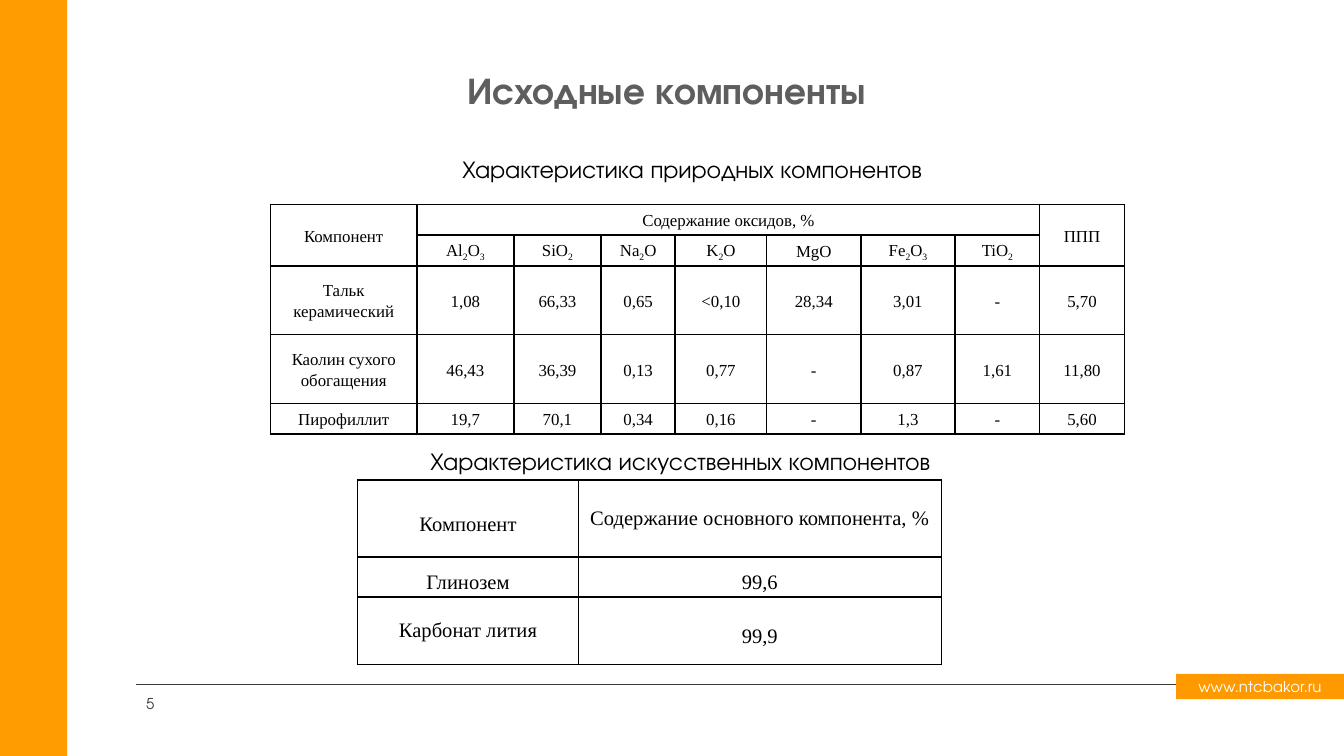
from itertools import groupby

from lxml.etree import SubElement
from pptx import Presentation
from pptx.dml.color import RGBColor
from pptx.enum.shapes import MSO_CONNECTOR as CONNECTOR, MSO_SHAPE as SHAPE
from pptx.enum.text import MSO_ANCHOR as ANCHOR, PP_ALIGN as ALIGN
from pptx.oxml.ns import qn
from pptx.util import Cm, Pt

ORANGE = RGBColor(0xFF, 0x9D, 0x00)
BADGE_ORANGE = RGBColor(0xFF, 0x99, 0x00)
WHITE = RGBColor(0xFF, 0xFF, 0xFF)
BLACK = RGBColor(0x00, 0x00, 0x00)
TITLE_GREY = RGBColor(0x5E, 0x5E, 0x5E)
DARK_GREY = RGBColor(0x3B, 0x3B, 0x3B)
HEADING_FONT = "TeX Gyre Adventor"
TABLE_FONT = "Times New Roman"

OXIDES = ["Al2O3", "SiO2", "Na2O", "K2O", "MgO", "Fe2O3", "TiO2"]
NATURAL = [
    ["Тальк керамический", "1,08", "66,33", "0,65", "<0,10", "28,34", "3,01", "‑", "5,70"],
    ["Каолин сухого обогащения", "46,43", "36,39", "0,13", "0,77", "-", "0,87", "1,61", "11,80"],
    ["Пирофиллит", "19,7", "70,1", "0,34", "0,16", "-", "1,3", "‑", "5,60"],
]
# Each artificial cell: text and line spacing
ARTIFICIAL = [
    [("Компонент", 1.5), ("Содержание основного компонента, %", 1)],
    [("Глинозем", 1.5), ("99,6", 1.5)],
    [("Карбонат лития", 1), ("99,9", 1.5)],
]


def add_run(paragraph, text, size, color, font=HEADING_FONT, bold=False):
    run = paragraph.add_run()
    run.text = text
    run.font.size = Pt(size)
    run.font.name = font
    run.font.bold = bold
    run.font.color.rgb = color
    return run


def write_line(shape, text, size, color, align=ALIGN.CENTER, anchor=ANCHOR.MIDDLE,
               insets=(0.08, 0.08), bold=False):
    frame = shape.text_frame
    frame.word_wrap = True
    frame.vertical_anchor = anchor
    frame.margin_left = frame.margin_right = Cm(insets[0])
    frame.margin_top = frame.margin_bottom = Cm(insets[1])
    paragraph = frame.paragraphs[0]
    paragraph.alignment = align
    return add_run(paragraph, text, size, color, bold=bold)


def add_panel(slide, box, color):
    panel = slide.shapes.add_shape(SHAPE.RECTANGLE, *map(Cm, box))
    panel.shadow.inherit = False
    panel.fill.solid()
    panel.fill.fore_color.rgb = color
    panel.line.fill.background()
    return panel


def add_footer(slide, left, top, right):
    """Rule, site badge and page number, placed from the left end of the rule."""
    rule = slide.shapes.add_connector(CONNECTOR.STRAIGHT, Cm(left), Cm(top),
                                      Cm(right - 2.59), Cm(top))
    rule.line.color.rgb = DARK_GREY
    rule.line.width = Pt(1)
    SubElement(rule._element.spPr, qn("a:effectLst"))

    badge = add_panel(slide, (right - 3.17, top - 0.2, 3.17, 0.48), BADGE_ORANGE)
    write_line(badge, "www.ntcbakor.ru", 8, WHITE)

    number = slide.shapes.add_textbox(Cm(left - 0.11), Cm(top + 0.1), Cm(0.71), Cm(0.51))
    digit = write_line(number, "5", 8, DARK_GREY, align=ALIGN.RIGHT, insets=(0.25, 0.13))
    digit.font._element.set("spc", "30")


def place_title(slide, box):
    title = slide.shapes.title
    title.left, title.top, title.width, title.height = map(Cm, box)
    write_line(title, "Исходные компоненты", 20, TITLE_GREY, bold=True)


def add_caption(slide, box, text):
    caption = slide.shapes.add_textbox(*map(Cm, box))
    write_line(caption, text, 13, BLACK, anchor=ANCHOR.TOP, insets=(0.2, 0.1))


def add_grid(slide, left, top, widths, heights):
    """Plain table with thin black borders on every cell."""
    table = slide.shapes.add_table(len(heights), len(widths), Cm(left), Cm(top),
                                   Cm(sum(widths)), Cm(sum(heights))).table
    table.first_row = table.horz_banding = False
    for column, width in zip(table.columns, widths):
        column.width = Cm(width)
    for row, height in zip(table.rows, heights):
        row.height = Cm(height)
    for cell in table.iter_cells():
        cell.margin_left = cell.margin_right = Cm(0.15)
        cell.margin_top = cell.margin_bottom = 0
        cell.vertical_anchor = ANCHOR.MIDDLE
        properties = cell._tc.get_or_add_tcPr()
        for side in ("lnL", "lnR", "lnT", "lnB"):
            border = SubElement(properties, qn(f"a:{side}"), w=str(Pt(1)))
            fill = SubElement(border, qn("a:solidFill"))
            SubElement(fill, qn("a:srgbClr"), val=str(BLACK))
        cell.fill.background()
    return table


def write_cell(cell, text, size, spacing, formula=False):
    paragraph = cell.text_frame.paragraphs[0]
    paragraph.alignment = ALIGN.CENTER
    paragraph.line_spacing = spacing
    if not formula:
        add_run(paragraph, text, size, BLACK, TABLE_FONT)
        return
    # Digits of a formula are subscripts
    for is_digit, letters in groupby(text, str.isdigit):
        run = add_run(paragraph, "".join(letters), size, BLACK, TABLE_FONT)
        if is_digit:
            run.font._element.set("baseline", "-25000")


def add_natural_table(slide, left, top):
    widths = [2.77, 1.83, 1.65, 1.4, 1.73, 1.78, 1.78, 1.6, 1.6]
    table = add_grid(slide, left, top, widths, [0.58, 0.58, 1.3, 1.3, 0.58])
    last = len(widths) - 1

    # Two-level header
    for column in (0, last):
        table.cell(0, column).merge(table.cell(1, column))
    table.cell(0, 1).merge(table.cell(0, last - 1))
    for column, text in ((0, "Компонент"), (1, "Содержание оксидов, %"), (last, "ППП")):
        write_cell(table.cell(0, column), text, 9, 1.15)
    for column, oxide in enumerate(OXIDES, 1):
        write_cell(table.cell(1, column), oxide, 9, 1.15, formula=True)

    # Composition of each component
    for row, values in enumerate(NATURAL, 2):
        for column, value in enumerate(values):
            write_cell(table.cell(row, column), value, 9, 1.15)


def add_artificial_table(slide, left, top):
    table = add_grid(slide, left, top, [4.17, 6.86], [1.45, 0.76, 1.27])
    for row, entries in enumerate(ARTIFICIAL):
        for column, (text, spacing) in enumerate(entries):
            write_cell(table.cell(row, column), text, 11, spacing)


def main():
    deck = Presentation()
    deck.slide_width, deck.slide_height = Cm(25.4), Cm(14.28)
    slide = deck.slides.add_slide(deck.slide_layouts[5])

    # Page frame
    add_footer(slide, 2.57, 12.93, 25.4)
    add_panel(slide, (-0.03, -0.03, 1.3, 14.33), ORANGE)

    # Title and the two tables with their captions
    place_title(slide, (7.92, 1.19, 9.37, 0.99))
    add_caption(slide, (5.41, 2.82, 15.34, 0.76), "Характеристика природных компонентов")
    add_natural_table(slide, 5.11, 3.86)
    add_caption(slide, (6.76, 8.33, 12.19, 0.76), "Характеристика искусственных компонентов")
    add_artificial_table(slide, 6.76, 9.07)

    deck.save("out.pptx")


if __name__ == "__main__":
    main()
